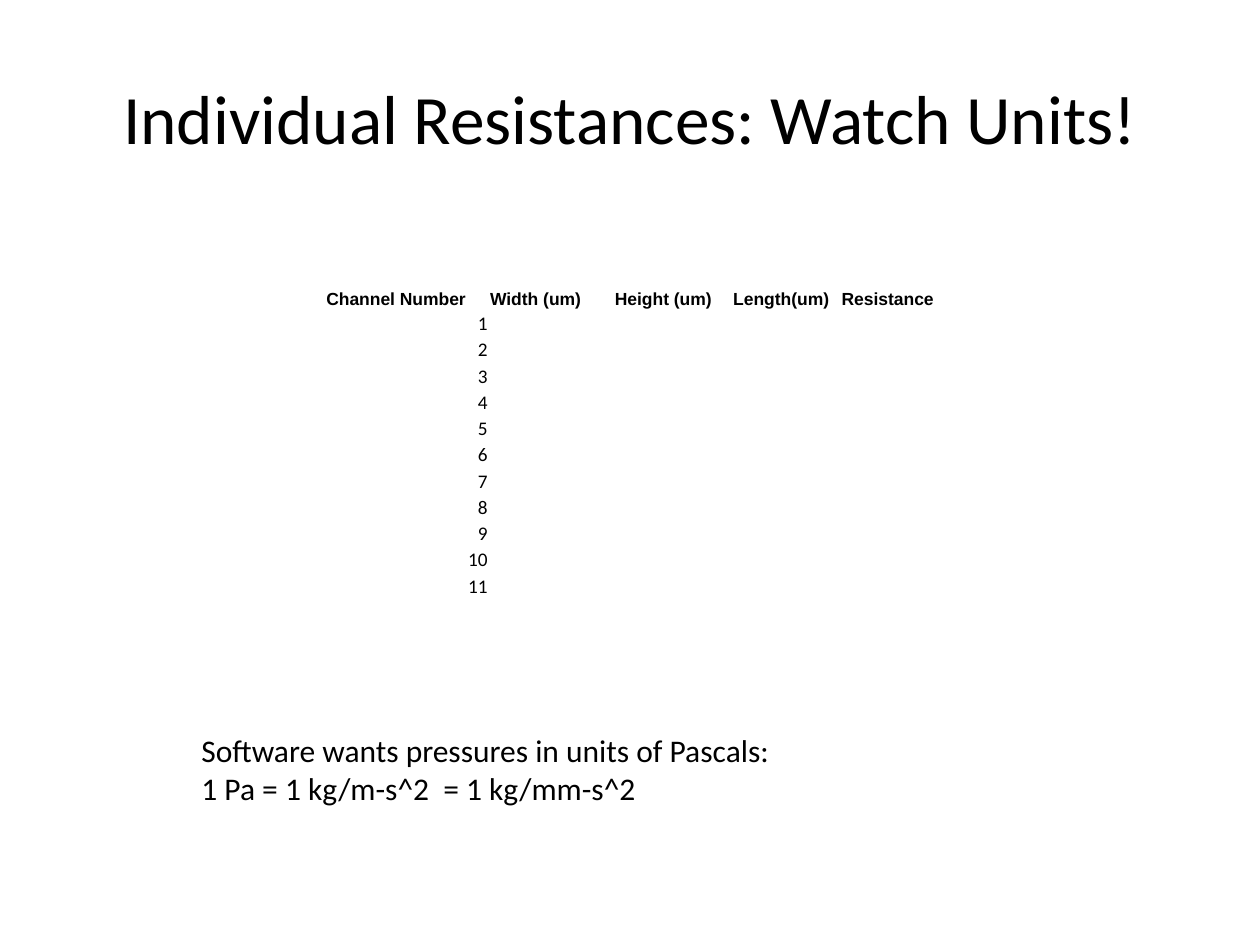
from pptx import Presentation
from pptx.dml.color import RGBColor
from pptx.enum.text import MSO_ANCHOR as Anchor, MSO_AUTO_SIZE as AutoSize, PP_ALIGN as Align
from pptx.oxml.ns import qn
from pptx.util import Inches, Pt
from lxml import etree

INK = "000000"
TITLE = {"name": "Calibri", "size": Pt(39.6), "bold": False}
NOTE = {"name": "Calibri", "size": Pt(18), "bold": False}
HEADER = {"name": "Arial", "size": Pt(10), "bold": True}
NUMBER = {"name": "Calibri", "size": Pt(11), "bold": False}
CELL = {"margin_left": Inches(0.01), "margin_right": Inches(0.01),
        "margin_top": Inches(0.01), "margin_bottom": 0,
        "vertical_anchor": Anchor.BOTTOM}

COLUMNS = {"Channel Number": 1.3, "Width (um)": 0.99, "Height (um)": 0.94,
           "Length(um)": 0.86, "Resistance": 0.8}
CHANNELS = 11


def apply(target, values):
    for name, value in values.items():
        setattr(target, name, value)


def paint(font, color):
    font.color.rgb = RGBColor.from_string(color)


def write(paragraph, text, style, align=Align.LEFT):
    paragraph.alignment = align
    run = paragraph.add_run()
    run.text = text
    apply(run.font, style)
    paint(run.font, INK)


def add_text(slide, box, lines, style, align=Align.LEFT, **frame_format):
    frame = slide.shapes.add_textbox(*map(Inches, box)).text_frame
    apply(frame, {"word_wrap": True, **frame_format})
    for index, line in enumerate(lines):
        paragraph = frame.add_paragraph() if index else frame.paragraphs[0]
        write(paragraph, line, style, align)


def add_resistance_table(slide, box):
    table = slide.shapes.add_table(CHANNELS + 1, len(COLUMNS), *map(Inches, box)).table
    apply(table, {"first_row": False, "horz_banding": False})
    for column, width in zip(table.columns, COLUMNS.values()):
        column.width = Inches(width)
    for cell in table.iter_cells():
        apply(cell, CELL)
        cell.fill.background()

    # Header row
    for index, heading in enumerate(COLUMNS):
        write(table.cell(0, index).text_frame.paragraphs[0], heading, HEADER)

    # Channel numbers, with blank cells to fill in beside them
    for channel in range(1, CHANNELS + 1):
        number, *blanks = table.rows[channel].cells
        write(number.text_frame.paragraphs[0], str(channel), NUMBER, Align.RIGHT)
        for blank in blanks:
            # A small end mark keeps an empty cell from stretching its row
            paragraph = blank.text_frame.paragraphs[0]
            etree.SubElement(paragraph._p, qn("a:endParaRPr"), sz="1100")


def main():
    deck = Presentation()
    deck.slide_width, deck.slide_height = Inches(10), Inches(7.5)
    slide = deck.slides.add_slide(deck.slide_layouts[6])

    # Title
    add_text(slide, (0.5, 0.3, 9, 1.25), ["Individual Resistances: Watch Units!"],
             TITLE, Align.CENTER, vertical_anchor=Anchor.MIDDLE)

    # Channel table
    add_resistance_table(slide, (2.58, 2.25, 4.9, 2.5))

    # Note on units
    add_text(slide, (1.5, 5.75, 6.92, 0.71),
             ["Software wants pressures in units of Pascals:",
              "1 Pa = 1 kg/m-s^2  = 1 kg/mm-s^2"],
             NOTE, auto_size=AutoSize.SHAPE_TO_FIT_TEXT)

    deck.save("out.pptx")


if __name__ == "__main__":
    main()
